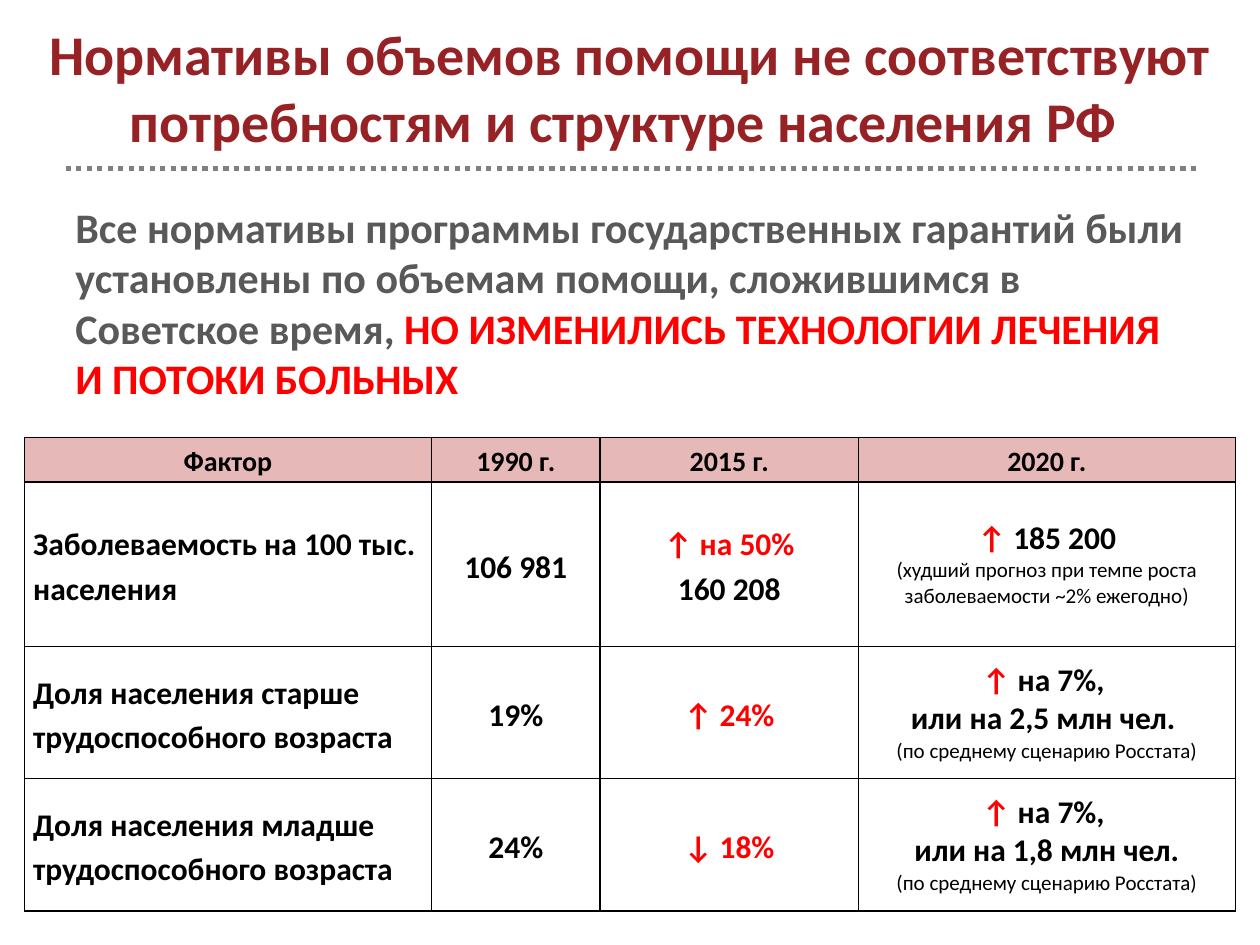
from lxml import etree
from pptx import Presentation
from pptx.dml.color import RGBColor
from pptx.enum.dml import MSO_LINE
from pptx.enum.shapes import MSO_CONNECTOR
from pptx.enum.text import MSO_ANCHOR, PP_ALIGN
from pptx.oxml.ns import qn
from pptx.util import Pt

LEFT, CENTER = PP_ALIGN.LEFT, PP_ALIGN.CENTER
MIDDLE = MSO_ANCHOR.MIDDLE
STRAIGHT = MSO_CONNECTOR.STRAIGHT
DOTS = MSO_LINE.ROUND_DOT

FONT = "Calibri"
MAROON = RGBColor(0x96, 0x22, 0x25)
GREY = RGBColor(0x59, 0x59, 0x59)
RULE_GREY = RGBColor(0x80, 0x80, 0x80)
RED = RGBColor(0xFF, 0x00, 0x00)
BLACK = RGBColor(0x00, 0x00, 0x00)
PINK = RGBColor(0xE6, 0xB9, 0xB8)
WHITE = RGBColor(0xFF, 0xFF, 0xFF)

# Content: a cell is a list of paragraphs, a paragraph a list of (text, style)
STYLES = {  # size, bold, colour
    "title": (32, True, MAROON),
    "lead": (24, True, GREY),
    "alert": (24, True, RED),
    "head": (16, True, BLACK),
    "main": (18, True, BLACK),
    "trend": (18, True, RED),
    "note": (12, False, BLACK),
}
TITLE = [("Нормативы объемов помощи не соответствуют потребностям "
          "и структуре населения РФ ", "title")]
LEAD = [
    ("Все нормативы программы государственных гарантий были установлены "
     "по объемам помощи, сложившимся в Советское время, ", "lead"),
    ("НО ИЗМЕНИЛИСЬ ТЕХНОЛОГИИ ЛЕЧЕНИЯ И ПОТОКИ БОЛЬНЫХ", "alert"),
]
HEADERS = ["Фактор", "1990 г.", "2015 г.", "2020 г."]
ROWS = [
    [
        [[("Заболеваемость на 100 тыс. населения", "main")]],
        [[("106 981", "main")]],
        [[("↑ на 50%", "trend")], [("160 208", "main")]],
        [[("↑", "trend"), (" 185 200", "main")],
         [("(худший прогноз при темпе роста заболеваемости ~2% ежегодно)", "note")]],
    ],
    [
        [[("Доля населения старше трудоспособного возраста", "main")]],
        [[("19%", "main")]],
        [[("↑ 24%", "trend")]],
        [[("↑", "trend"), (" на 7%, \nили на 2,5 млн чел. \n", "main"),
          ("(по среднему сценарию Росстата)", "note")]],
    ],
    [
        [[("Доля населения младше трудоспособного возраста", "main")]],
        [[("24%", "main")]],
        [[("↓ 18%", "trend")]],
        [[("↑ ", "trend"), ("на 7%, \nили на 1,8 млн чел.", "main")],
         [("(по среднему сценарию Росстата)", "note")]],
    ],
]
COL_WIDTHS = [232.5, 96.5, 147.5, 215.5]
ROW_HEIGHTS = [25.5, 94, 75.5, 75.5]


def add_runs(p, runs):
    for text, style in runs:
        size, bold, color = STYLES[style]
        for i, line in enumerate(text.split("\n")):
            if i:
                p.add_line_break()
            if line:
                r = p.add_run()
                r.text = line
                r.font.name, r.font.size, r.font.bold = FONT, Pt(size), bold
                r.font.color.rgb = color


def add_borders(cell):
    tc_pr = cell._tc.get_or_add_tcPr()
    for i, side in enumerate(("a:lnL", "a:lnR", "a:lnT", "a:lnB")):
        ln = etree.Element(qn(side), w=str(Pt(1)))
        fill = etree.SubElement(ln, qn("a:solidFill"))
        etree.SubElement(fill, qn("a:srgbClr"), val=str(BLACK))
        tc_pr.insert(i, ln)


def fill_cell(cell, paragraphs, align, spacing, color, gap=0):
    cell.margin_left = cell.margin_right = Pt(5)
    cell.margin_top = cell.margin_bottom = 0
    cell.vertical_anchor = MIDDLE
    cell.fill.solid()
    cell.fill.fore_color.rgb = color
    add_borders(cell)
    tf = cell.text_frame
    for i, runs in enumerate(paragraphs):
        p = tf.add_paragraph() if i else tf.paragraphs[0]
        p.alignment, p.line_spacing = align, spacing
        p.space_before = p.space_after = Pt(gap)
        add_runs(p, runs)


prs = Presentation()
prs.slide_width, prs.slide_height = Pt(720), Pt(540)
s = prs.slides.add_slide(prs.slide_layouts[5])

# Title
sp = s.shapes.title
sp.left, sp.top, sp.width, sp.height = Pt(0), Pt(4.5), Pt(720), Pt(90)
tf = sp.text_frame
tf.word_wrap = True
tf.vertical_anchor = MIDDLE
tf.paragraphs[0].alignment = CENTER
add_runs(tf.paragraphs[0], TITLE)

# Dotted rule under the title
rule = s.shapes.add_connector(STRAIGHT, Pt(37.5), Pt(96.5), Pt(684), Pt(96.5))
rule.line.color.rgb = RULE_GREY
rule.line.width = Pt(3)
rule.line.dash_style = DOTS
etree.SubElement(rule._element.spPr, qn("a:effectLst"))

# Lead statement
tf = s.shapes.add_textbox(Pt(36), Pt(111.5), Pt(648), Pt(93.5)).text_frame
tf.word_wrap = True
p = tf.paragraphs[0]
p.space_before = Pt(5)
add_runs(p, LEAD)

# Table of factors
table = s.shapes.add_table(len(ROWS) + 1, len(HEADERS), Pt(14), Pt(250),
                           Pt(sum(COL_WIDTHS)), Pt(sum(ROW_HEIGHTS))).table
table.first_row = table.horz_banding = False
for col, width in zip(table.columns, COL_WIDTHS):
    col.width = Pt(width)
for row, height in zip(table.rows, ROW_HEIGHTS):
    row.height = Pt(height)
for c, text in enumerate(HEADERS):
    fill_cell(table.cell(0, c), [[(text, "head")]], CENTER, 1.15, PINK, 6)
for r, cells in enumerate(ROWS, 1):
    for c, paragraphs in enumerate(cells):
        fill_cell(table.cell(r, c), paragraphs, CENTER if c else LEFT,
                  1.0 if c == len(HEADERS) - 1 else 1.15, WHITE)

prs.save("out.pptx")
